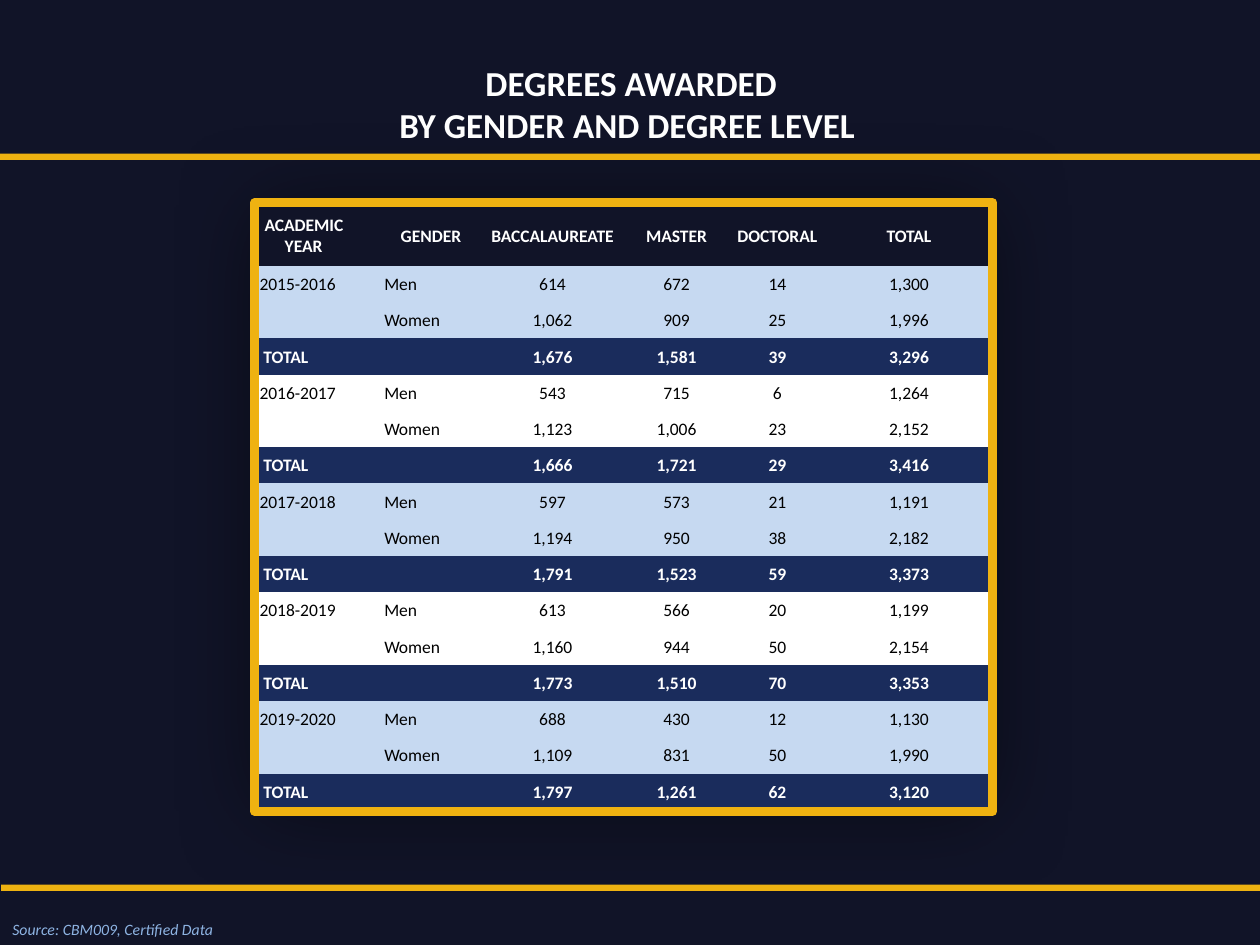
from lxml.etree import SubElement
from pptx import Presentation
from pptx.dml.color import RGBColor
from pptx.enum.shapes import MSO_SHAPE
from pptx.enum.text import MSO_ANCHOR, MSO_AUTO_SIZE, PP_ALIGN
from pptx.oxml import parse_xml
from pptx.oxml.ns import qn
from pptx.util import Inches, Pt

NAVY, BLUE, PALE, WHITE, BLACK = "111428", "1A2C5C", "C6D9F1", "FFFFFF", "000000"
GOLD, FRAME_GOLD, SOURCE_BLUE = "EEB211", "EFB211", "8EB4E3"
NO_GRID_STYLE = "{2D5ABB26-0587-4C30-8999-92F81FD0307C}"
SOFT_SHADOW = (
    '<a:effectLst xmlns:a="http://schemas.openxmlformats.org/drawingml/2006/main">'
    '<a:outerShdw blurRad="635000" algn="ctr" rotWithShape="0">'
    '<a:srgbClr val="000000"><a:alpha val="50000"/></a:srgbClr>'
    '</a:outerShdw></a:effectLst>'
)

HEADINGS = ["ACADEMIC\nYEAR", "GENDER", "BACCALAUREATE", "MASTER", "DOCTORAL", "TOTAL"]
COLUMN_WIDTHS = [0.99, 0.76, 1.17, 0.8, 0.8, 1.29]
HEADING_HEIGHT = 0.47
# Baccalaureate, master and doctoral degrees of men, then of women
DEGREES = {
    "2015-2016": ([614, 672, 14], [1062, 909, 25]),
    "2016-2017": ([543, 715, 6], [1123, 1006, 23]),
    "2017-2018": ([597, 573, 21], [1194, 950, 38]),
    "2018-2019": ([613, 566, 20], [1160, 944, 50]),
    "2019-2020": ([688, 430, 12], [1109, 831, 50]),
}


def color(hex_string):
    return RGBColor.from_string(hex_string)


def inches(box):
    return [Inches(length) for length in box]


def style_paragraph(para, size, hex_color, bold=False, italic=False, align=PP_ALIGN.LEFT):
    para.alignment = align
    font = para.font
    font.name, font.size, font.bold, font.italic = "Calibri", Pt(size), bold, italic
    font.color.rgb = color(hex_color)


def add_title(page, box):
    title = page.shapes.title
    title.left, title.top, title.width, title.height = inches(box)
    frame = title.text_frame
    frame.text = "DEGREES AWARDED\nBY GENDER AND DEGREE LEVEL "
    frame.auto_size = MSO_AUTO_SIZE.NONE
    frame.vertical_anchor = MSO_ANCHOR.TOP
    for para in frame.paragraphs:
        style_paragraph(para, 20, WHITE, bold=True, align=PP_ALIGN.CENTER)


def add_source(page, box):
    frame = page.shapes.add_textbox(*inches(box)).text_frame
    frame.word_wrap = True
    frame.text = "Source: CBM009, Certified Data"
    style_paragraph(frame.paragraphs[0], 9, SOURCE_BLUE, italic=True)


def add_rectangle(page, box):
    rectangle = page.shapes.add_shape(MSO_SHAPE.RECTANGLE, *inches(box))
    rectangle.shadow.inherit = False
    return rectangle


def add_rule(page, box):
    rule = add_rectangle(page, box)
    rule.fill.solid()
    rule.fill.fore_color.rgb = color(GOLD)
    rule.line.fill.background()


def add_frame(page, box):
    frame = add_rectangle(page, box)
    frame.fill.background()
    frame.line.color.rgb = color(FRAME_GOLD)
    frame.line.width = Pt(5)


def degree_rows():
    """Yield the cell texts, fill, text colour and boldness of each row below the headings."""
    for index, (year, genders) in enumerate(DEGREES.items()):
        fill = WHITE if index % 2 else PALE
        totals = [sum(pair) for pair in zip(*genders)]
        for first, gender, counts, look in (
            (year, "Men", genders[0], (fill, BLACK, False)),
            ("", "Women", genders[1], (fill, BLACK, False)),
            (" TOTAL", "", totals, (BLUE, WHITE, True)),
        ):
            numbers = [f"{number:,}" for number in counts + [sum(counts)]]
            yield [first, gender] + numbers, *look


def fill_cell(cell, text, fill, text_color, bold, align, margins):
    cell.fill.solid()
    cell.fill.fore_color.rgb = color(fill)
    cell.vertical_anchor = MSO_ANCHOR.MIDDLE
    cell.margin_left, cell.margin_top, cell.margin_right, cell.margin_bottom = inches(margins)
    cell.text_frame.text = text
    for para in cell.text_frame.paragraphs:
        style_paragraph(para, 10, text_color, bold, align=align)
        if not text:
            SubElement(para._p, qn("a:endParaRPr"), sz="1000")


def add_degree_table(page, box):
    rows = [(HEADINGS, NAVY, WHITE, True), *degree_rows()]
    shape = page.shapes.add_table(len(rows), len(HEADINGS), *inches(box))
    table = shape.table
    properties = table._tbl.tblPr
    properties.find(qn("a:tableStyleId")).text = NO_GRID_STYLE
    properties.insert(0, parse_xml(SOFT_SHADOW))
    table.first_row = table.horz_banding = False
    for column, width in zip(table.columns, COLUMN_WIDTHS):
        column.width = Inches(width)
    row_height = (box[3] - HEADING_HEIGHT) / (len(rows) - 1)

    for row, (texts, fill, text_color, bold) in enumerate(rows):
        heading = row == 0
        table.rows[row].height = Inches(HEADING_HEIGHT if heading else row_height)
        margins = [0.05] * 4 if heading else [0.01, 0.01, 0.01, 0]
        for column, text in enumerate(texts):
            left = column == 0 or (column == 1 and not heading)
            align = PP_ALIGN.LEFT if left else PP_ALIGN.CENTER
            fill_cell(table.cell(row, column), text, fill, text_color, bold, align, margins)
        if texts[0] == " TOTAL":
            table.cell(row, 0).merge(table.cell(row, 1))

    year_line = table.cell(0, 0).text_frame.paragraphs[1]
    year_line._p.get_or_add_pPr().set("marL", str(Inches(0.16)))


def main():
    deck = Presentation()
    deck.slide_width, deck.slide_height = Inches(10), Inches(7.5)
    page = deck.slides.add_slide(deck.slide_layouts[5])
    page.background.fill.solid()
    page.background.fill.fore_color.rgb = color(NAVY)

    add_degree_table(page, (2.05, 1.64, 5.8, 4.79))
    add_title(page, (1.73, 0.44, 6.56, 0.77))
    add_source(page, (0, 7.25, 1.96, 0.25))
    add_rule(page, (0.01, 7.02, 10, 0.05))
    add_rule(page, (0, 1.22, 10, 0.05))
    add_frame(page, (2.02, 1.61, 5.86, 4.83))
    deck.save("out.pptx")


if __name__ == "__main__":
    main()
